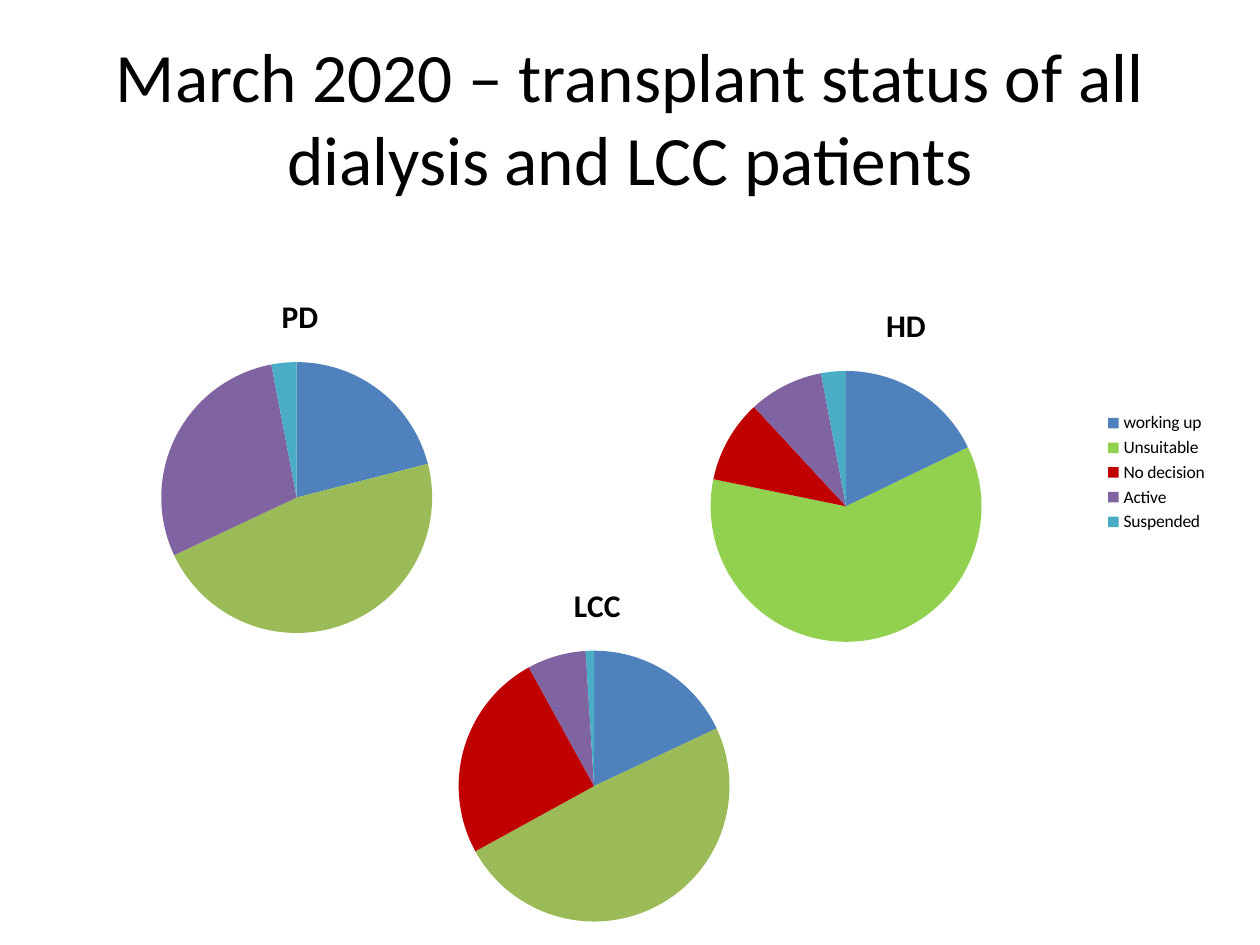
"""Build a slide of three pie charts on transplant status."""
from dataclasses import dataclass

from lxml import etree
from pptx import Presentation
from pptx import util as u
from pptx.chart import data as chart_data
from pptx.dml import color
from pptx.enum import chart as charts
from pptx.enum import text

CHART_NS = "http://schemas.openxmlformats.org/drawingml/2006/chart"
STATUSES = ("working up", "Unsuitable ", "No decision", "Active", "Suspended")
NUMBERS = ("1", "2", "3", "4", "5")


@dataclass(frozen=True)
class Theme:
    """Hold the colours, font and type sizes of the slide."""

    font: str = "Calibri"
    ink: str = "000000"
    working_up: str = "4F81BD"
    unsuitable: str = "9BBB59"
    unsuitable_bright: str = "92D050"
    no_decision: str = "C00000"
    active: str = "8064A2"
    suspended: str = "4BACC6"
    title_size: float = 39.6
    chart_title_size: float = 18
    legend_size: float = 10


THEME = Theme()


@dataclass(frozen=True)
class Pie:
    """Describe one patient group and the place of its chart."""

    name: str
    left: float
    top: float
    values: tuple[int, ...]
    categories: tuple[str, ...] = NUMBERS
    unsuitable: str = THEME.unsuitable
    plot_left: float = 0.28
    legend: bool = False


PIES = (
    Pie("PD", -0.12, 2.18, (21, 47, 0, 29, 3)),
    Pie("HD", 4.69, 2.25, (18, 61, 10, 9, 3), STATUSES,
        THEME.unsuitable_bright, 0.19, True),
    Pie("LCC", 2.24, 4.47, (18, 49, 25, 7, 1)),
)


def style_font(font, size: float, bold: bool = False) -> None:
    """Apply the theme font, colour and a size."""
    font.name = THEME.font
    font.size = u.Pt(size)
    font.bold = bold
    font.color.rgb = color.RGBColor.from_string(THEME.ink)


def place_plot(chart, left: float) -> None:
    """Fix the inner plot area as fractions of the chart."""
    area = chart.plots._plotArea
    for old in area.findall(f"{{{CHART_NS}}}layout"):
        area.remove(old)
    layout = etree.Element(f"{{{CHART_NS}}}layout")
    manual = etree.SubElement(layout, f"{{{CHART_NS}}}manualLayout")
    settings = {"layoutTarget": "inner", "xMode": "edge", "yMode": "edge",
                "x": left, "y": 0.23, "w": 0.43, "h": 0.72}
    for tag, value in settings.items():
        etree.SubElement(manual, f"{{{CHART_NS}}}{tag}", val=str(value))
    area.insert(0, layout)


def add_pie(page, pie: Pie) -> None:
    """Draw one titled pie chart."""
    table = chart_data.CategoryChartData()
    table.categories = pie.categories
    table.add_series(pie.name, pie.values)
    chart = page.shapes.add_chart(
        charts.XL_CHART_TYPE.PIE, u.Inches(pie.left), u.Inches(pie.top),
        u.Inches(5), u.Inches(3), table).chart
    style_font(chart.font, THEME.legend_size)
    chart.has_title = True
    span = chart.chart_title.text_frame.paragraphs[0].add_run()
    span.text = pie.name
    style_font(span.font, THEME.chart_title_size, True)
    chart.has_legend = pie.legend
    if pie.legend:
        chart.legend.position = charts.XL_LEGEND_POSITION.RIGHT
        chart.legend.include_in_layout = False
        style_font(chart.legend.font, THEME.legend_size)
    plot = chart.plots[0]
    plot.vary_by_categories = True
    fills = (THEME.working_up, pie.unsuitable, THEME.no_decision,
             THEME.active, THEME.suspended)
    for index, fill in enumerate(fills):
        slice_format = plot.series[0].points[index].format
        slice_format.fill.solid()
        slice_format.fill.fore_color.rgb = color.RGBColor.from_string(fill)
        slice_format.line.fill.background()
    place_plot(chart, pie.plot_left)


def add_title(page, words: str) -> None:
    """Fill and place the title placeholder."""
    box = page.shapes.title
    box.left, box.top = u.Inches(0.5), u.Inches(0.3)
    box.width, box.height = u.Inches(9), u.Inches(1.25)
    frame = box.text_frame
    frame.word_wrap = True
    frame.auto_size = text.MSO_AUTO_SIZE.NONE
    frame.vertical_anchor = text.MSO_ANCHOR.MIDDLE
    para = frame.paragraphs[0]
    para.alignment = text.PP_ALIGN.CENTER
    span = para.add_run()
    span.text = words
    style_font(span.font, THEME.title_size)


def main() -> None:
    """Build and save the deck."""
    deck = Presentation()
    deck.slide_width, deck.slide_height = u.Inches(10), u.Inches(7.5)
    page = deck.slides.add_slide(deck.slide_layouts[5])
    add_title(page, "March 2020 – transplant status of all dialysis and LCC patients")
    for pie in PIES:
        add_pie(page, pie)
    deck.save("out.pptx")


if __name__ == "__main__":
    main()
